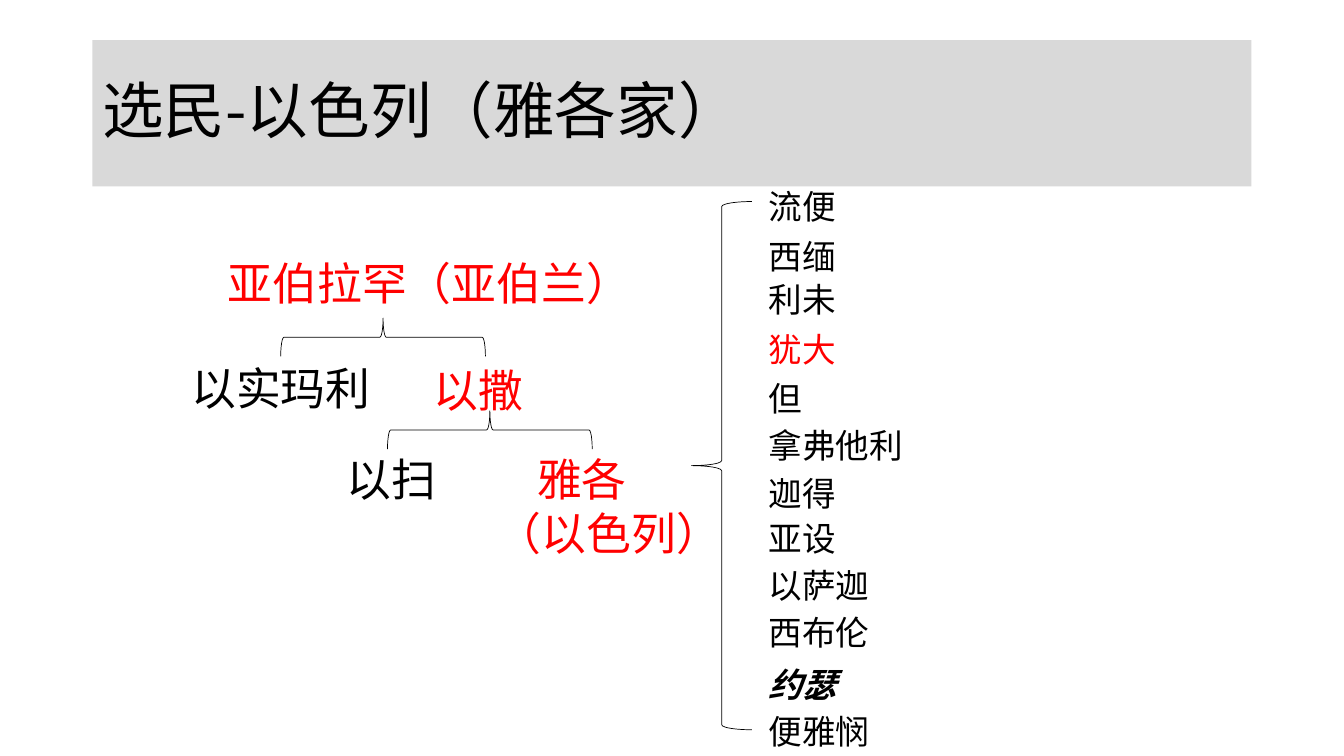
from dataclasses import dataclass

from lxml.etree import SubElement
from pptx import Presentation
from pptx.dml.color import RGBColor as RGB
from pptx.enum.shapes import MSO_SHAPE as SHAPE
from pptx.enum.text import MSO_ANCHOR as ANCHOR, MSO_AUTO_SIZE as FIT, PP_ALIGN as ALIGN
from pptx.oxml.ns import qn
from pptx.util import Pt


@dataclass(frozen=True)
class Theme:
    """Fonts, colours and type sizes."""
    font: str = "Noto Sans CJK SC"
    ink: str = "000000"
    chosen: str = "FF0000"
    band: str = "D9D9D9"
    title: int = 44
    family: int = 32
    son: int = 24
    rule: float = 0.5


class Chart:
    """Draws the family tree on one slide."""

    def __init__(self, slide, theme):
        """Keep the slide and the theme."""
        self.s, self.t = slide, theme

    def add_text(self, p, text, size, color, **style):
        """Add one styled run to a paragraph."""
        p.alignment = ALIGN.LEFT
        r = p.add_run()
        r.text = text
        for key, value in {"name": self.t.font, "size": Pt(size), **style}.items():
            setattr(r.font, key, value)
        r.font.color.rgb = RGB.from_string(color)
        SubElement(r._r.get_or_add_rPr(), qn("a:ea"), typeface=self.t.font)

    def shape(self, kind, x, y, w, h):
        """Add a preset shape without a shadow."""
        sp = self.s.shapes.add_shape(kind, Pt(x), Pt(y), Pt(w), Pt(h))
        sp.shadow.inherit = False
        return sp

    def title(self, text, x, y, w, h):
        """Add the title band."""
        sp = self.shape(SHAPE.RECTANGLE, x, y, w, h)
        sp.fill.solid()
        sp.fill.fore_color.rgb = RGB.from_string(self.t.band)
        sp.line.fill.background()
        tf = sp.text_frame
        tf.word_wrap, tf.vertical_anchor = True, ANCHOR.MIDDLE
        tf.paragraphs[0].line_spacing = 0.9
        self.add_text(tf.paragraphs[0], text, self.t.title, self.t.ink)

    def brace(self, x, y, w, h, rotation=0):
        """Add a thin left brace."""
        sp = self.shape(SHAPE.LEFT_BRACE, x, y, w, h)
        sp.fill.background()
        sp.line.color.rgb = RGB.from_string(self.t.ink)
        sp.line.width, sp.rotation = Pt(self.t.rule), rotation

    def label(self, lines, x, y, size, color, para=None, indent=0, **style):
        """Add a name sized to its characters."""
        w = max(map(len, lines)) * size + 15.4
        h = len(lines) * size * 1.2 + 7.2
        sp = self.s.shapes.add_textbox(Pt(x), Pt(y), Pt(w), Pt(h))
        tf = sp.text_frame
        tf.word_wrap, tf.auto_size = False, FIT.SHAPE_TO_FIT_TEXT
        for i, line in enumerate(lines):
            p = tf.add_paragraph() if i else tf.paragraphs[0]
            for key, value in (para or {}).items():
                setattr(p, key, value)
            self.add_text(p, line, size, color, **style)
        if indent:
            tf.paragraphs[0]._p.get_or_add_pPr().set("indent", str(Pt(indent)))


def main():
    """Build and save the slide."""
    prs = Presentation()
    prs.slide_width, prs.slide_height = Pt(960), Pt(540)
    t = Theme()
    c = Chart(prs.slides.add_slide(prs.slide_layouts[6]), t)
    c.title("选民-以色列（雅各家）", 66, 28.75, 828, 104.4)

    c.label(["亚伯拉罕（亚伯兰）"], 155.5, 183.6, t.family, t.chosen,
            para={"line_spacing": 0.9, "space_before": Pt(10)})
    family = [("以实玛利", 129.6, 254.2, t.ink), ("以撒", 302.4, 255.6, t.chosen),
              ("以扫", 240.5, 319, t.ink)]
    for name, x, y, color in family:
        c.label([name], x, y, t.family, color)
    c.label(["雅各", "（以色列）"], 347.8, 319, t.family, t.chosen, indent=28.8)

    c.brace(493.9, 144, 43.2, 377.3)
    for x, y in [(259.9, 167.8), (336.2, 234)]:
        c.brace(x, y, 27.4, 146.2, 90)

    sons = [("流便", 129.6), ("西缅", 164.9), ("利未", 195.8), ("犹大", 231.1),
            ("但", 266.4), ("拿弗他利", 300.2), ("迦得", 334.1), ("亚设", 366.5),
            ("以萨迦", 400.3), ("西布伦", 433.4), ("约瑟", 470.9), ("便雅悯", 504)]
    colors = {"犹大": t.chosen}
    styles = {"约瑟": {"bold": True, "italic": True}}
    for name, y in sons:
        c.label([name], 542, y, t.son, colors.get(name, t.ink), **styles.get(name, {}))
    prs.save("out.pptx")


if __name__ == "__main__":
    main()
